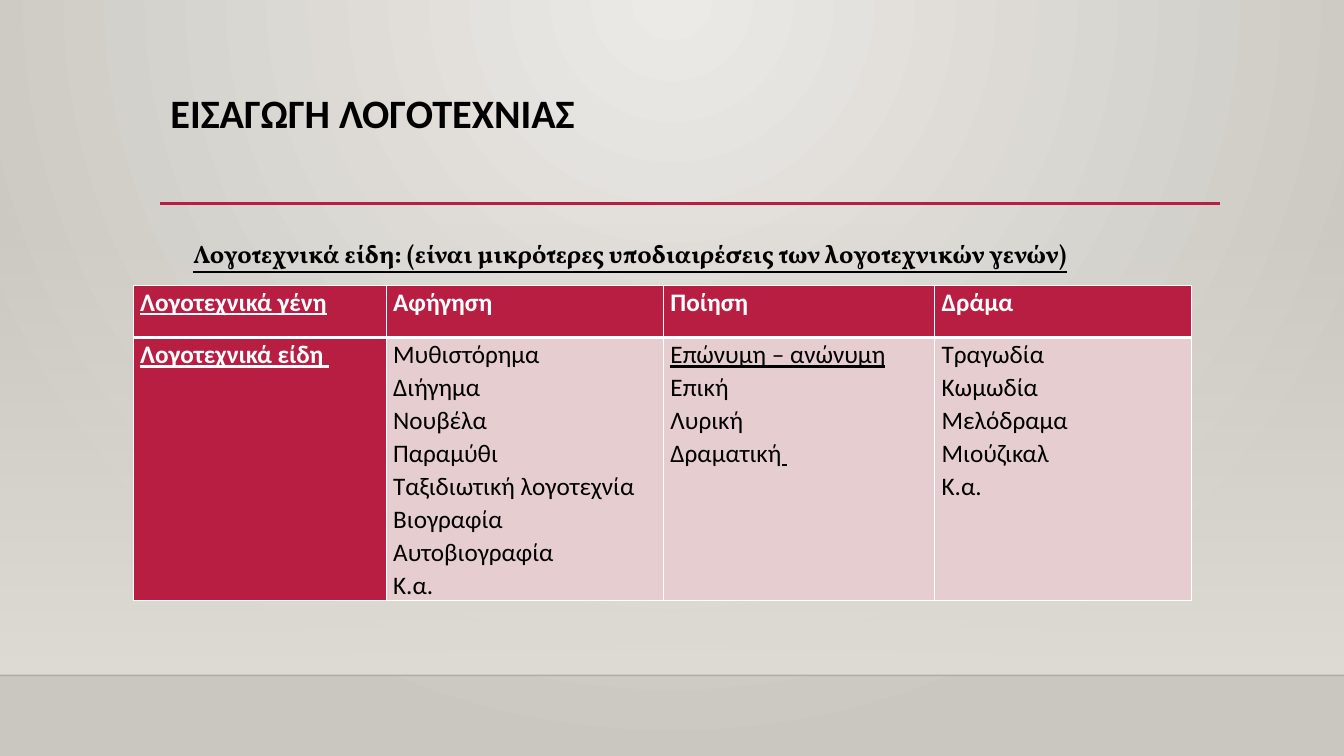
import pptx
import pptx.util
import pptx.oxml
import pptx.oxml.ns
import pptx.dml.color
import pptx.enum.shapes
import pptx.enum.text
import lxml.etree

Inches, Pt = pptx.util.Inches, pptx.util.Pt
qn = pptx.oxml.ns.qn

# Content
TITLE = "ΕΙΣΑΓΩΓΗ ΛΟΓΟΤΕΧΝΙΑΣ"
CAPTION = "Λογοτεχνικά είδη: (είναι μικρότερες υποδιαιρέσεις των λογοτεχνικών γενών)"
GENRES = ["Λογοτεχνικά γένη", "Αφήγηση", "Ποίηση", "Δράμα"]
KINDS = [
    ["Λογοτεχνικά είδη "],
    ["Μυθιστόρημα", "Διήγημα", "Νουβέλα", "Παραμύθι", "Ταξιδιωτική λογοτεχνία",
     "Βιογραφία", "Αυτοβιογραφία", "Κ.α."],
    ["Επώνυμη – ανώνυμη", "Επική", "Λυρική", ("Δραματική", " ")],
    ["Τραγωδία", "Κωμωδία", "Μελόδραμα", "Μιούζικαλ", "Κ.α."],
]
UNDERLINED = {"Λογοτεχνικά γένη", "Λογοτεχνικά είδη ", "Επώνυμη – ανώνυμη", " "}
COLUMN_WIDTHS = [2.51, 2.75, 2.69, 2.55]
ROW_HEIGHTS = [0.52, 2.55]
COLORS = {"accent": "B71E42", "cell": "E6CDCF", "white": "FFFFFF", "text": "000000",
          "center": "ECEAE7", "edge": "CAC7C1", "wall": "DFDBD5", "floor": "000001"}


def rgb(name):
    return pptx.dml.color.RGBColor.from_string(COLORS[name])


def set_alpha(color_element, percent):
    lxml.etree.SubElement(color_element, qn("a:alpha")).set("val", str(percent * 1000))


def set_gradient(fill, start, end):
    fill.gradient()
    for stop, name, position in zip(fill.gradient_stops, (start, end), (0, 1)):
        stop.color.rgb = rgb(name)
        stop.position = position


def add_run(paragraph, text, size, font, color="text", bold=False, underline=False):
    run = paragraph.add_run()
    run.text = text
    run.font.size, run.font.name = Pt(size), font
    run.font.bold, run.font.underline = bold, underline
    run.font.color.rgb = rgb(color)


def add_rule(left, right, y, color, width):
    rule = slide.shapes.add_connector(pptx.enum.shapes.MSO_CONNECTOR.STRAIGHT,
                                      Inches(left), Inches(y), Inches(right), Inches(y))
    rule.line.color.rgb = rgb(color)
    rule.line.width = Pt(width)
    lxml.etree.SubElement(rule._element.spPr, qn("a:effectLst"))
    return rule


def set_borders(cell, top, bottom):
    properties = cell._tc.get_or_add_tcPr()
    for index, (side, width) in enumerate(zip("LRTB", (1, 1, top, bottom))):
        border = lxml.etree.Element(qn("a:ln" + side), w=str(Pt(width)))
        solid = lxml.etree.SubElement(border, qn("a:solidFill"))
        lxml.etree.SubElement(solid, qn("a:srgbClr"), val=COLORS["white"])
        properties.insert(index, border)


presentation = pptx.Presentation()
presentation.slide_width, presentation.slide_height = Inches(13.33), Inches(7.5)
slide = presentation.slides.add_slide(presentation.slide_layouts[5])

# Background: light spreading from the top centre
set_gradient(slide.background.fill, "center", "edge")
gradient = next(slide.background._cSld.iter(qn("a:gradFill")))
gradient.remove(gradient.find(qn("a:lin")))
glow = lxml.etree.SubElement(gradient, qn("a:path"))
glow.set("path", "circle")
lxml.etree.SubElement(glow, qn("a:fillToRect"), l="43000", t="0", r="43000", b="100000")

# Wall fading in towards the floor line
wall = slide.shapes.add_shape(pptx.enum.shapes.MSO_SHAPE.RECTANGLE,
                              0, Inches(2.21), Inches(13.33), Inches(4.49))
wall.shadow.inherit = False
wall.line.fill.background()
set_gradient(wall.fill, "wall", "wall")
wall.fill._xPr.find(qn("a:gradFill")).find(qn("a:lin")).set("ang", "5400000")
set_alpha(next(wall._element.spPr.iter(qn("a:srgbClr"))), 0)

floor_line = add_rule(0, 13.33, 6.7, "floor", 1)
set_alpha(next(floor_line._element.spPr.iter(qn("a:srgbClr"))), 20)
add_rule(1.59, 12.1, 2.02, "accent", 2.5)

# Title
title = slide.shapes.title
title.left, title.top, title.width, title.height = map(Inches, (1.59, 0.88, 10.5, 0.99))
title.text_frame.auto_size = pptx.enum.text.MSO_AUTO_SIZE.NONE
title.text_frame.vertical_anchor = pptx.enum.text.MSO_ANCHOR.TOP
heading = title.text_frame.paragraphs[0]
heading.alignment = pptx.enum.text.PP_ALIGN.LEFT
heading.line_spacing = 0.9
add_run(heading, TITLE, 28.8, "Calibri", bold=True)

# Table of genres and their kinds
table = slide.shapes.add_table(2, len(GENRES), Inches(1.32), Inches(2.83),
                               Inches(sum(COLUMN_WIDTHS)), Inches(sum(ROW_HEIGHTS))).table
for column, width in zip(table.columns, COLUMN_WIDTHS):
    column.width = Inches(width)
for row, height in zip(table.rows, ROW_HEIGHTS):
    row.height = Inches(height)

for r, row_content in enumerate([[[genre] for genre in GENRES], KINDS]):
    for c, lines in enumerate(row_content):
        cell = table.cell(r, c)
        is_header = r == 0 or c == 0
        cell.margin_left = cell.margin_right = Inches(0.07)
        cell.margin_top = cell.margin_bottom = 0
        cell.fill.solid()
        cell.fill.fore_color.rgb = rgb("accent" if is_header else "cell")
        set_borders(cell, top=1 if r == 0 else 3, bottom=3 if r == 0 else 1)
        for i, line in enumerate(lines):
            frame = cell.text_frame
            paragraph = frame.paragraphs[0] if i == 0 else frame.add_paragraph()
            paragraph.line_spacing = 1.07
            for text in (line if isinstance(line, tuple) else (line,)):
                add_run(paragraph, text, 18, "Calibri", "white" if is_header else "text",
                        bold=is_header, underline=text in UNDERLINED)

# Caption above the table
caption = slide.shapes.add_textbox(Inches(1.82), Inches(2.29), Inches(10.93), Inches(0.47))
caption.text_frame.word_wrap = True
caption_line = caption.text_frame.paragraphs[0]
caption_line.line_spacing = 1.07
add_run(caption_line, CAPTION, 18, "Vollkorn", bold=True, underline=True)

presentation.save("out.pptx")
